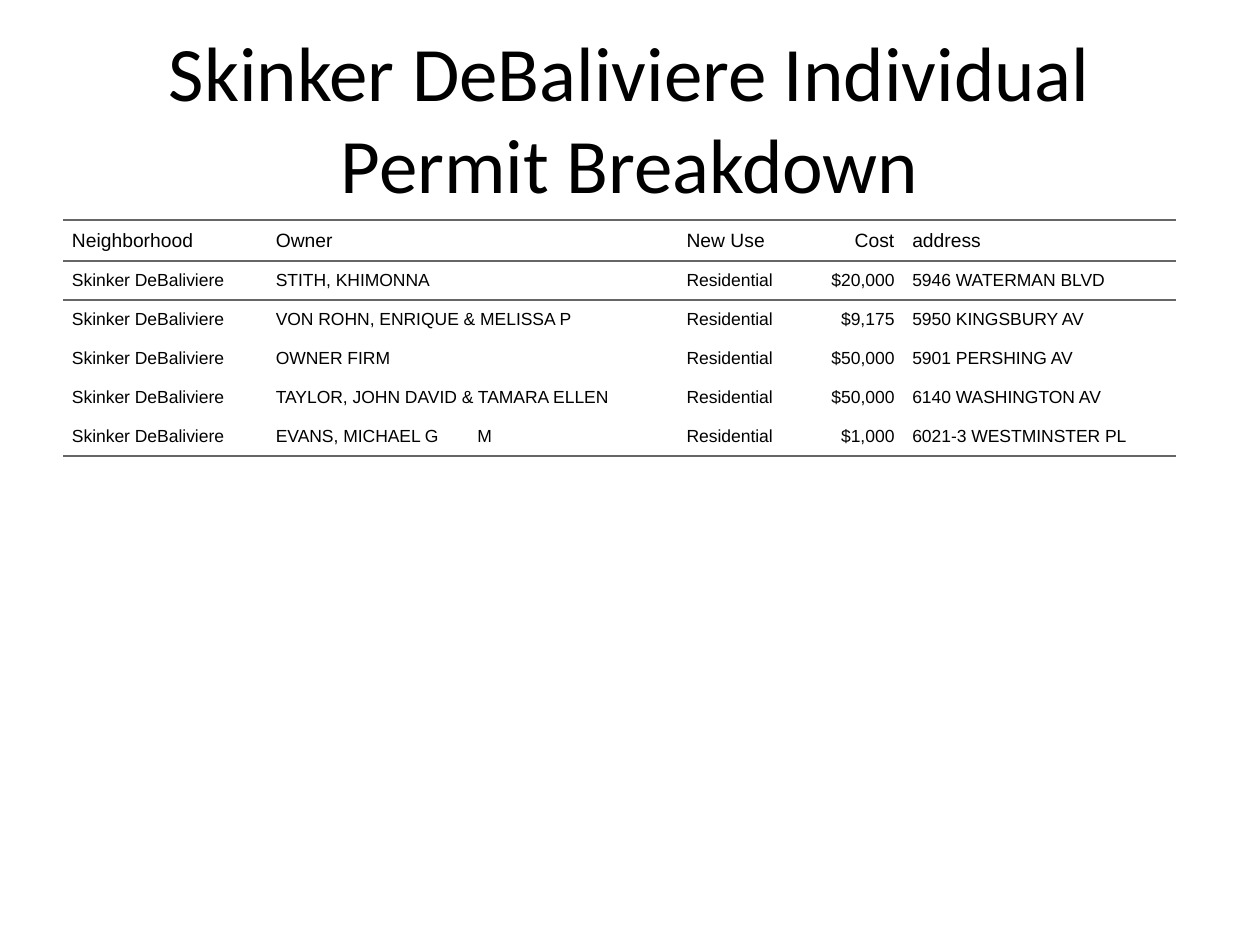
from lxml import etree
from pptx import Presentation
from pptx.dml.color import RGBColor
from pptx.enum.text import MSO_ANCHOR, PP_ALIGN
from pptx.oxml.ns import qn
from pptx.util import Cm, Pt

MIDDLE = MSO_ANCHOR.MIDDLE
LEFT, CENTER, RIGHT = PP_ALIGN.LEFT, PP_ALIGN.CENTER, PP_ALIGN.RIGHT

COLORS = {"text": "000000", "rule": "666666"}
NO_STYLE = "{2D5ABB26-0587-4C30-8999-92F81FD0307C}"
CELL_FORMAT = {
    "margin_left": Cm(0.18),
    "margin_right": Cm(0.18),
    "margin_top": Cm(0.18),
    "margin_bottom": Cm(0.18),
    "vertical_anchor": MIDDLE,
}

COL_WIDTHS = [4.11, 8.28, 2.64, 1.91, 5.49]
HEADER_HEIGHT, ROW_HEIGHT = 0.79, 0.75
COST_COL = 3
HEADERS = ["Neighborhood", "Owner", "New Use", "Cost", "address"]
PERMITS = [
    ("STITH, KHIMONNA", "$20,000", "5946 WATERMAN BLVD"),
    ("VON ROHN, ENRIQUE & MELISSA P", "$9,175", "5950 KINGSBURY AV"),
    ("OWNER FIRM", "$50,000", "5901 PERSHING AV"),
    ("TAYLOR, JOHN DAVID & TAMARA ELLEN", "$50,000", "6140 WASHINGTON AV"),
    ("EVANS, MICHAEL G        M", "$1,000", "6021-3 WESTMINSTER PL"),
]


def write(tf, text, font, size, align):
    p = tf.paragraphs[0]
    p.alignment = align
    r = p.add_run()
    r.text = text
    r.font.name = font
    r.font.size = Pt(size)
    r.font.color.rgb = RGBColor.from_string(COLORS["text"])


def add_title(slide, text):
    sp = slide.shapes.add_textbox(Cm(1.27), Cm(0.76), Cm(22.86), Cm(3.18))
    tf = sp.text_frame
    tf.word_wrap = True
    tf.vertical_anchor = MIDDLE
    write(tf, text, "Calibri", 44, CENTER)


def add_rule(cell, side):
    tc_pr = cell._tc.get_or_add_tcPr()
    ln = etree.SubElement(tc_pr, qn(f"a:ln{side}"), w=str(Pt(1.5)))
    fill = etree.SubElement(ln, qn("a:solidFill"))
    etree.SubElement(fill, qn("a:srgbClr"), val=COLORS["rule"])


def format_cell(cell, text, size, align, sides):
    for name, value in CELL_FORMAT.items():
        setattr(cell, name, value)
    for side in sides:
        add_rule(cell, side)
    cell.fill.background()
    write(cell.text_frame, text, "Arial", size, align)


def add_permit_table(slide, rows):
    heights = [HEADER_HEIGHT] + [ROW_HEIGHT] * (len(rows) - 1)
    frame = slide.shapes.add_table(
        len(rows), len(COL_WIDTHS), Cm(1.27), Cm(4.44),
        Cm(sum(COL_WIDTHS)), Cm(sum(heights)))
    table = frame.table
    table.first_row = table.horz_banding = False
    table._tbl.tblPr.find(qn("a:tableStyleId")).text = NO_STYLE

    for col, width in zip(table.columns, COL_WIDTHS):
        col.width = Cm(width)
    for row, height in zip(table.rows, heights):
        row.height = Cm(height)

    # Rules frame the header and close the last row
    rules = {0: "TB", 1: "T", len(rows) - 1: "B"}
    for i, values in enumerate(rows):
        for j, text in enumerate(values):
            format_cell(table.cell(i, j), text, 11 if i == 0 else 10,
                        RIGHT if j == COST_COL else LEFT, rules.get(i, ""))


def main():
    prs = Presentation()
    prs.slide_width, prs.slide_height = Cm(25.4), Cm(19.05)
    slide = prs.slides.add_slide(prs.slide_layouts[6])

    # Title
    add_title(slide, "Skinker DeBaliviere Individual Permit Breakdown")

    # Permit table
    rows = [HEADERS] + [
        ["Skinker DeBaliviere", owner, "Residential", cost, address]
        for owner, cost, address in PERMITS
    ]
    add_permit_table(slide, rows)

    prs.save("out.pptx")


if __name__ == "__main__":
    main()
